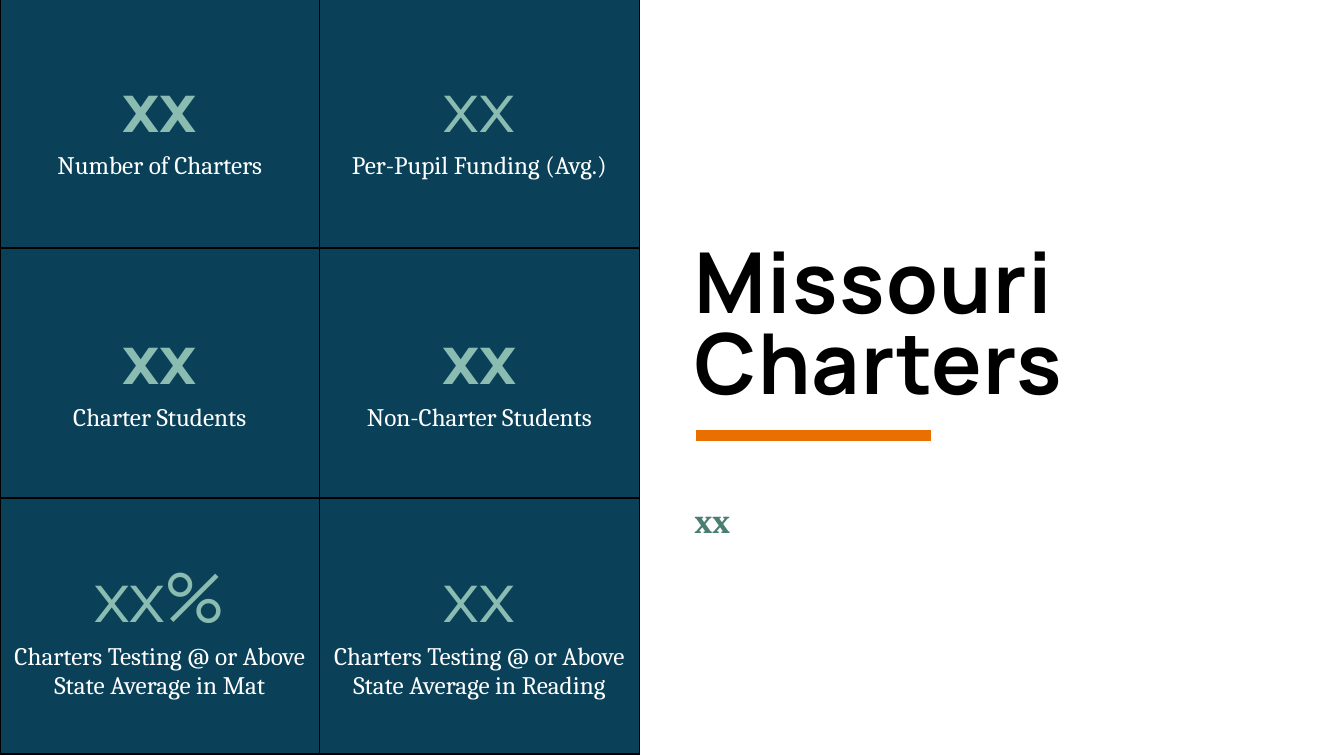
from lxml.etree import SubElement
from pptx import Presentation
from pptx.dml.color import RGBColor
from pptx.enum.shapes import MSO_CONNECTOR as Connector
from pptx.enum.text import MSO_ANCHOR as Anchor, PP_ALIGN as Align
from pptx.oxml.ns import qn
from pptx.util import Inches, Pt

TITLE = "Missouri Charters"
BODY = "xx"
# (figure, figure is bold, caption)
STATS = [
    [("xx", True, "Number of Charters"),
     ("xx", False, "Per-Pupil Funding (Avg.)")],
    [("xx", True, "Charter Students"),
     ("xx", True, "Non-Charter Students")],
    [("xx%", False, "Charters Testing @ or Above State Average in Mat"),
     ("xx", False, "Charters Testing @ or Above State Average in Reading")],
]
ROW_HEIGHTS = [2.52, 2.48, 2.54]
COLUMN_WIDTH = 3.17
TABLE_TOP = -0.06
TEXT_LEFT, TEXT_WIDTH = 6.89, 6

THEME = {
    "heading": "Manrope", "serif": "Cambria",
    "title_size": 60, "figure_size": 48, "body_size": 24, "caption_size": 18,
    "black": "000000", "white": "FFFFFF", "navy": "0A4158",
    "mint": "8BBCB2", "green": "497E73", "orange": "E86F00",
}


def color(name):
    return RGBColor.from_string(THEME[name])


def add_span(para, text, font, size, ink, bold=False):
    span = para.add_run()
    span.text = text
    span.font.name = THEME[font]
    span.font.size = Pt(THEME[size])
    span.font.color.rgb = color(ink)
    span.font.bold = bold
    return span


def add_text_box(page, top, height, anchor):
    """Add a wrapping box without insets and return its first paragraph."""
    box = page.shapes.add_textbox(
        Inches(TEXT_LEFT), Inches(top), Inches(TEXT_WIDTH), Inches(height))
    frame = box.text_frame
    frame.word_wrap = True
    frame.vertical_anchor = anchor
    frame.margin_left = frame.margin_right = 0
    frame.margin_top = frame.margin_bottom = 0
    return frame.paragraphs[0]


def add_borders(cell):
    properties = cell._tc.get_or_add_tcPr()
    for position, side in enumerate(("lnL", "lnR", "lnT", "lnB")):
        border = SubElement(properties, qn(f"a:{side}"), w=str(Pt(1)))
        fill = SubElement(border, qn("a:solidFill"))
        SubElement(fill, qn("a:srgbClr"), val=THEME["black"])
        properties.insert(position, border)


def fill_stat(cell, figure, bold, caption):
    cell.fill.solid()
    cell.fill.fore_color.rgb = color("navy")
    cell.vertical_anchor = Anchor.MIDDLE
    cell.margin_left = cell.margin_right = Inches(0.05)
    cell.margin_top = cell.margin_bottom = Inches(0.05)
    add_borders(cell)
    frame = cell.text_frame
    top, bottom = frame.paragraphs[0], frame.add_paragraph()
    top.alignment = bottom.alignment = Align.CENTER
    add_span(top, figure, "heading", "figure_size", "mint", bold)
    add_span(bottom, caption, "serif", "caption_size", "white")


def add_stats_table(page):
    table = page.shapes.add_table(
        len(STATS), len(STATS[0]), Inches(0), Inches(TABLE_TOP),
        Inches(COLUMN_WIDTH * len(STATS[0])), Inches(sum(ROW_HEIGHTS))).table
    table.first_row = table.horz_banding = False
    for column in table.columns:
        column.width = Inches(COLUMN_WIDTH)
    for r, (height, stats) in enumerate(zip(ROW_HEIGHTS, STATS)):
        table.rows[r].height = Inches(height)
        for c, stat in enumerate(stats):
            fill_stat(table.cell(r, c), *stat)


def add_accent_line(page):
    accent = page.shapes.add_connector(
        Connector.STRAIGHT, Inches(6.9), Inches(4.32), Inches(9.23), Inches(4.32))
    accent.line.color.rgb = color("orange")
    accent.line.width = Pt(8)
    SubElement(accent._element.spPr, qn("a:effectLst"))


def main():
    deck = Presentation()
    deck.slide_width, deck.slide_height = Inches(13.33), Inches(7.5)
    page = deck.slides.add_slide(deck.slide_layouts[6])

    add_accent_line(page)
    title = add_text_box(page, 0.47, 3.6, Anchor.BOTTOM)
    title.line_spacing = 0.8
    span = add_span(title, TITLE, "heading", "title_size", "black", True)
    span.font._element.set("spc", "100")

    body = add_text_box(page, 5, 1.8, Anchor.TOP)
    body.line_spacing = 0.9
    body.space_before = Pt(10)
    add_span(body, BODY, "serif", "body_size", "green", True)

    add_stats_table(page)
    deck.save("out.pptx")


if __name__ == "__main__":
    main()
